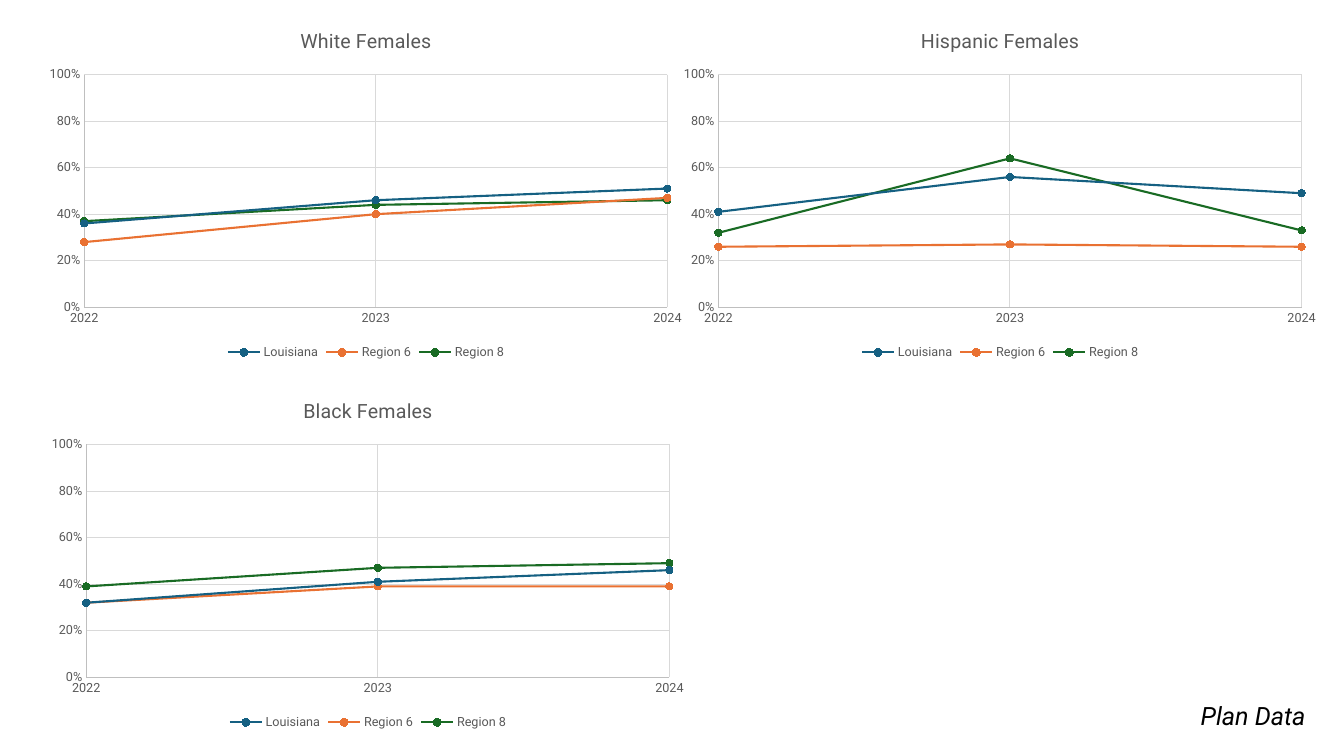
from lxml import etree
from pptx import Presentation
from pptx.chart.data import XyChartData
from pptx.dml.color import RGBColor
from pptx.enum.chart import (XL_CHART_TYPE, XL_LEGEND_POSITION,
                             XL_MARKER_STYLE, XL_TICK_MARK)
from pptx.oxml.ns import qn
from pptx.util import Inches, Pt

SCATTER = XL_CHART_TYPE.XY_SCATTER_LINES
BOTTOM = XL_LEGEND_POSITION.BOTTOM
CIRCLE = XL_MARKER_STYLE.CIRCLE
NO_TICK = XL_TICK_MARK.NONE

FONT = "Roboto"
COLORS = {
    "Louisiana": "156082",
    "Region 6": "E97132",
    "Region 8": "196B24",
    "label": "595959",
    "axis": "BFBFBF",
    "grid": "D9D9D9",
    "text": "000000",
}
YEARS = (2022, 2023, 2024)
CHART_W, CHART_H = 6.5, 3.5
PLOT_BOX = {"x": 0.07, "y": 0.18, "w": 0.89, "h": 0.66}
CHARTS = [
    ("Hispanic Females", 6.67, 0.11, {
        "Louisiana": (0.41, 0.56, 0.49),
        "Region 6": (0.26, 0.27, 0.26),
        "Region 8": (0.32, 0.64, 0.33),
    }),
    ("Black Females", 0.4, 3.78, {
        "Louisiana": (0.32, 0.41, 0.46),
        "Region 6": (0.32, 0.39, 0.39),
        "Region 8": (0.39, 0.47, 0.49),
    }),
    ("White Females", 0.38, 0.11, {
        "Louisiana": (0.36, 0.46, 0.51),
        "Region 6": (0.28, 0.4, 0.47),
        "Region 8": (0.37, 0.44, 0.46),
    }),
]


def color(name):
    return RGBColor.from_string(COLORS[name])


def style_font(font, size, name):
    font.name = FONT
    font.size = Pt(size)
    font.bold = False
    font.color.rgb = color(name)


def style_line(line, name, width):
    line.color.rgb = color(name)
    line.width = Pt(width)


def style_axis(axis, low, high, step, number_format):
    axis.minimum_scale = low
    axis.maximum_scale = high
    axis.major_unit = step
    axis.major_tick_mark = NO_TICK
    axis.minor_tick_mark = NO_TICK
    axis.has_major_gridlines = True
    style_line(axis.major_gridlines.format.line, "grid", 0.75)
    style_line(axis.format.line, "axis", 0.75)
    labels = axis.tick_labels
    labels.number_format = number_format
    labels.number_format_is_linked = False
    style_font(labels.font, 9, "label")


def style_series(series):
    series.smooth = False
    style_line(series.format.line, series.name, 1.5)
    marker = series.marker
    marker.style = CIRCLE
    marker.size = 5
    marker.format.fill.solid()
    marker.format.fill.fore_color.rgb = color(series.name)
    style_line(marker.format.line, series.name, 0.75)


def place_plot(chart):
    plot_area = chart.plots[0]._element.getparent()
    for old in plot_area.findall(qn("c:layout")):
        plot_area.remove(old)
    layout = etree.Element(qn("c:layout"))
    manual = etree.SubElement(layout, qn("c:manualLayout"))
    settings = {"layoutTarget": "inner", "xMode": "edge", "yMode": "edge", **PLOT_BOX}
    for tag, value in settings.items():
        etree.SubElement(manual, qn(f"c:{tag}")).set("val", str(value))
    plot_area.insert(0, layout)


def add_trend_chart(slide, title, left, top, width, height, rates):
    data = XyChartData()
    for region, values in rates.items():
        series = data.add_series(region)
        for year, value in zip(YEARS, values):
            series.add_data_point(year, value)
    chart = slide.shapes.add_chart(SCATTER, Inches(left), Inches(top),
                                   Inches(width), Inches(height), data).chart
    style_font(chart.font, 10, "text")
    chart.has_title = True
    tf = chart.chart_title.text_frame
    tf.text = title
    style_font(tf.paragraphs[0].runs[0].font, 14, "label")
    chart.chart_title.include_in_layout = False
    chart.has_legend = True
    chart.legend.position = BOTTOM
    chart.legend.include_in_layout = False
    style_font(chart.legend.font, 9, "label")
    style_axis(chart.category_axis, YEARS[0], YEARS[-1], 1, "General")
    style_axis(chart.value_axis, 0, 1, 0.2, "0%")
    chart.plots[0].vary_by_categories = False
    for series in chart.plots[0].series:
        style_series(series)
    place_plot(chart)


def add_source_label(slide, text, left, top, width, height):
    tf = slide.shapes.add_textbox(Inches(left), Inches(top),
                                  Inches(width), Inches(height)).text_frame
    tf.word_wrap = True
    tf.text = text
    font = tf.paragraphs[0].runs[0].font
    style_font(font, 18, "text")
    font.italic = True


def main():
    prs = Presentation()
    prs.slide_width, prs.slide_height = Inches(13.33), Inches(7.5)
    slide = prs.slides.add_slide(prs.slide_layouts[6])
    for title, left, top, rates in CHARTS:
        add_trend_chart(slide, title, left, top, CHART_W, CHART_H, rates)
    add_source_label(slide, "Plan Data", 11.81, 6.9, 1.63, 0.4)
    prs.save("out.pptx")


if __name__ == "__main__":
    main()
